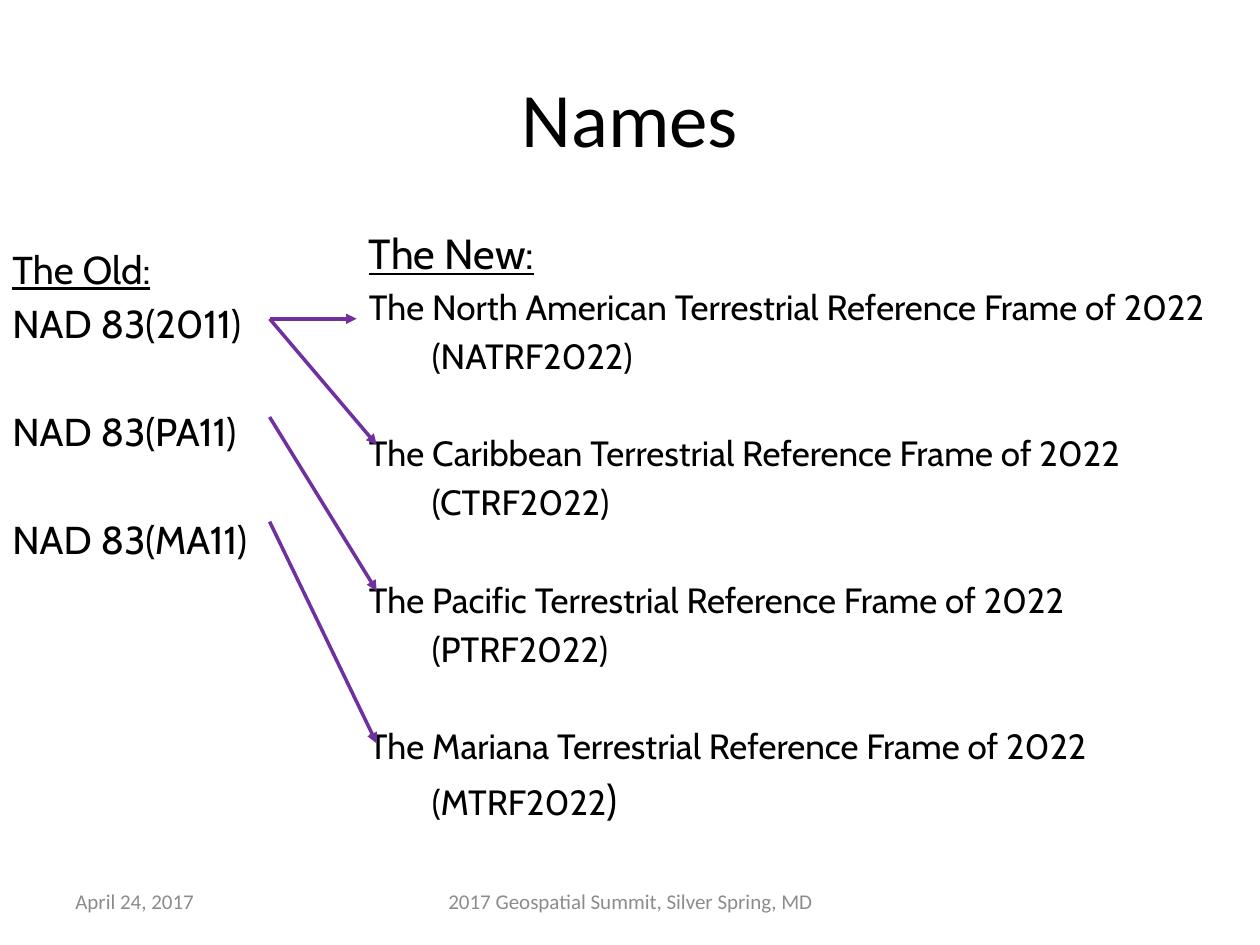
from lxml.etree import SubElement
from pptx import Presentation
from pptx.dml.color import RGBColor
from pptx.enum.shapes import MSO_CONNECTOR
from pptx.enum.text import MSO_ANCHOR, PP_ALIGN
from pptx.oxml.ns import qn
from pptx.util import Inches, Pt

COLORS = {"text": "000000", "footer": "8C8C8C", "arrow": "7030A0"}

presentation = Presentation()
presentation.slide_width = Inches(10)
presentation.slide_height = Inches(7.5)
slide = presentation.slides.add_slide(presentation.slide_layouts[6])


def add_text_box(left, top, width, height, anchor=MSO_ANCHOR.TOP):
    box = slide.shapes.add_textbox(Inches(left), Inches(top), Inches(width), Inches(height))
    box.text_frame.word_wrap = True
    box.text_frame.vertical_anchor = anchor
    return box.text_frame


def add_run(paragraph, text, size, font="Cabin", color="text", underline=False):
    run = paragraph.add_run()
    run.text = text
    run.font.size = Pt(size)
    run.font.name = font
    run.font.color.rgb = RGBColor.from_string(COLORS[color])
    run.font.underline = underline


# Title and footers
for text, left, top, width, height, size, color, alignment in [
    ("Names", 0.5, 0.3, 9, 1.25, 44, "text", PP_ALIGN.CENTER),
    ("April 24, 2017", 0.5, 6.95, 2.33, 0.4, 12, "footer", PP_ALIGN.LEFT),
    ("2017 Geospatial Summit, Silver Spring, MD", 3.42, 6.95, 3.17, 0.4, 12, "footer",
     PP_ALIGN.CENTER),
]:
    paragraph = add_text_box(left, top, width, height, MSO_ANCHOR.MIDDLE).paragraphs[0]
    paragraph.alignment = alignment
    add_run(paragraph, text, size, "Calibri", color)

# Old frames, one line apart
old_frames = add_text_box(0, 1.9, 2.99, 2.58)
add_run(old_frames.paragraphs[0], "The Old:", 22.2, underline=True)
for index, name in enumerate(["2011", "PA11", "MA11"]):
    paragraph = old_frames.add_paragraph()
    paragraph.space_before = Pt(35.3 if index else 4)
    add_run(paragraph, f"NAD 83({name})", 22.2)

# New frames, each with its indented abbreviation
new_frames = add_text_box(2.83, 1.76, 6.92, 5.25)
add_run(new_frames.paragraphs[0], "The New:", 24, underline=True)
regions = [("North American", "NATRF"), ("Caribbean", "CTRF"),
           ("Pacific", "PTRF"), ("Mariana", "MTRF")]
for index, (region, abbreviation) in enumerate(regions):
    paragraph = new_frames.add_paragraph()
    paragraph.space_before = Pt(31.7 if index else 4)
    add_run(paragraph, f"The {region} Terrestrial Reference Frame of 2022", 20)

    paragraph = new_frames.add_paragraph()
    paragraph.space_before = Pt(4)
    paragraph._p.get_or_add_pPr().set("marL", str(Inches(0.5)))
    add_run(paragraph, f"({abbreviation}2022", 20)
    add_run(paragraph, ")", 24 if index == len(regions) - 1 else 20)

# Arrows from old to new frames
for start_y, end_x, end_y in [(2.53, 2.83, 2.53), (2.53, 2.99, 3.53),
                              (3.31, 2.99, 4.69), (4.14, 2.99, 5.9)]:
    arrow = slide.shapes.add_connector(
        MSO_CONNECTOR.STRAIGHT, Inches(2.14), Inches(start_y), Inches(end_x), Inches(end_y))
    arrow.line.color.rgb = RGBColor.from_string(COLORS["arrow"])
    arrow.line.width = Pt(2)
    SubElement(arrow.line._get_or_add_ln(), qn("a:tailEnd"), type="triangle")
    SubElement(arrow._element.spPr, qn("a:effectLst"))

presentation.save("out.pptx")
